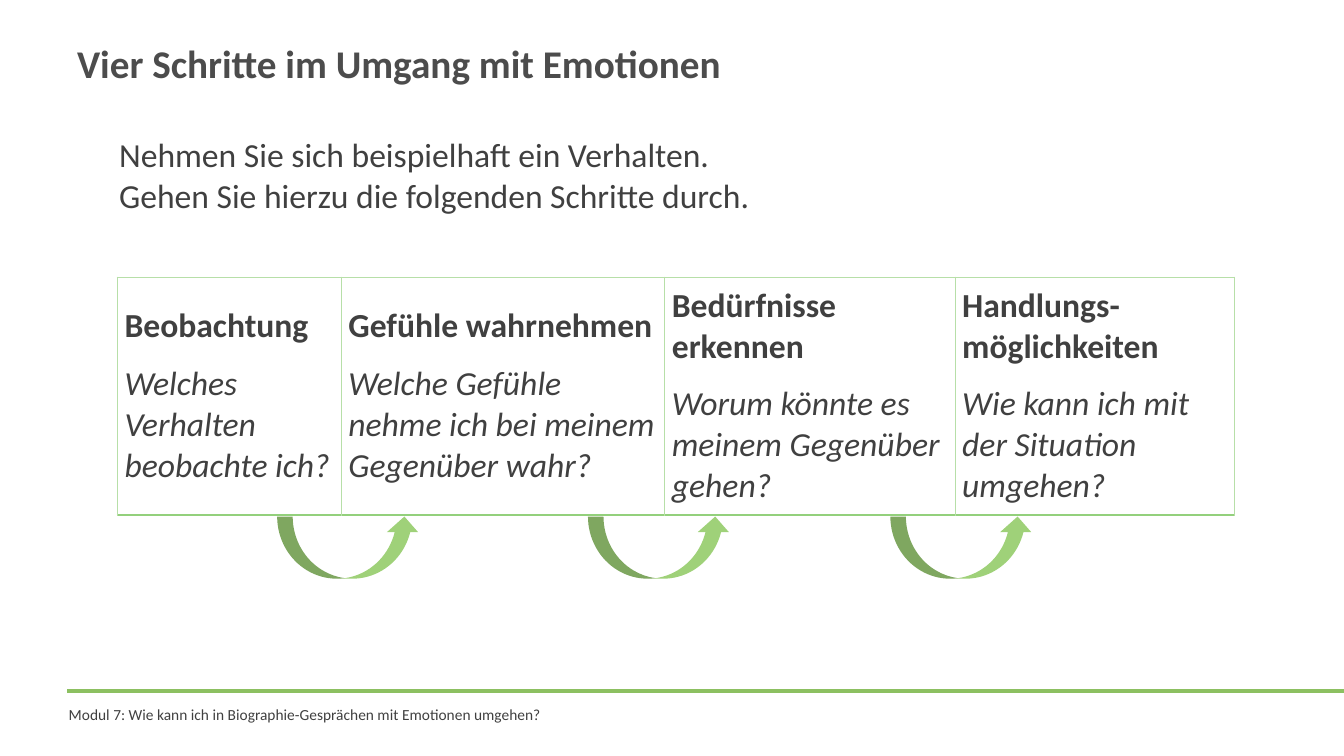
from pptx import Presentation
from pptx.dml.color import RGBColor
from pptx.enum.shapes import MSO_CONNECTOR, MSO_SHAPE
from pptx.enum.text import MSO_ANCHOR
from pptx.oxml import parse_xml
from pptx.oxml.ns import nsdecls, qn
from pptx.util import Inches, Pt

STRAIGHT = MSO_CONNECTOR.STRAIGHT
ARROW = MSO_SHAPE.CURVED_DOWN_ARROW
MIDDLE, TOP = MSO_ANCHOR.MIDDLE, MSO_ANCHOR.TOP

# Grid of 160 columns by 90 rows, twelve to the inch
COLS, ROWS = 160, 90
FONT, INK = "Calibri", "404040"
PALE, LEAF = "B7DFA8", "93D07C"

STEPS = [
    ("Beobachtung", "Welches Verhalten beobachte ich?", 2.22),
    ("Gefühle wahrnehmen",
     "Welche Gefühle nehme ich bei meinem Gegenüber wahr?", 3.21),
    ("Bedürfnisse erkennen", "Worum könnte es meinem Gegenüber gehen?", 2.88),
    ("Handlungs-möglichkeiten", "Wie kann ich mit der Situation umgehen?", 2.77),
]


def unit(n):
    return Inches(n / 12)


def place(*box):
    return [unit(n) for n in box]


def color(code):
    return RGBColor.from_string(code)


def add_run(para, text, size, ink=INK, bold=False, italic=False):
    run = para.add_run()
    run.text = text
    font = run.font
    font.name, font.size = FONT, Pt(size)
    font.bold, font.italic = bold, italic
    font.color.rgb = color(ink)


def add_text(slide, box, lines, size, anchor=TOP, **look):
    frame = slide.shapes.add_textbox(*place(*box)).text_frame
    frame.word_wrap = True
    frame.vertical_anchor = anchor
    for i, line in enumerate(lines):
        para = frame.add_paragraph() if i else frame.paragraphs[0]
        add_run(para, line, size, **look)


def add_rule(slide, left, right, row):
    rule = slide.shapes.add_connector(STRAIGHT, *place(left, row, right, row))
    rule.line.color.rgb = color("8CC061")
    rule.line.width = Pt(3)
    rule._element.spPr.append(parse_xml(f"<a:effectLst {nsdecls('a')}/>"))


def add_edges(cell):
    props = cell._tc.get_or_add_tcPr()
    edges = [("L", PALE, 1), ("R", PALE, 1), ("T", PALE, 1), ("B", LEAF, 1.5)]
    for i, (side, ink, width) in enumerate(edges):
        props.insert(i, parse_xml(
            f'<a:ln{side} {nsdecls("a")} w="{Pt(width)}"><a:solidFill>'
            f'<a:srgbClr val="{ink}"/></a:solidFill></a:ln{side}>'))


def fill_cell(cell, head, ask):
    cell.fill.background()
    cell.vertical_anchor = MIDDLE
    cell.margin_left = cell.margin_right = Inches(0.07)
    cell.margin_top = cell.margin_bottom = 0
    first = cell.text_frame.paragraphs[0]
    first.space_after = Pt(6)
    add_run(first, head, 24, bold=True)
    second = cell.text_frame.add_paragraph()
    second.space_before = Pt(6)
    add_run(second, ask, 24, italic=True)
    add_edges(cell)


def add_steps(slide, box):
    table = slide.shapes.add_table(1, len(STEPS), *place(*box)).table
    table.first_row = table.horz_banding = False
    for i, (head, ask, width) in enumerate(STEPS):
        table.columns[i].width = Inches(width)
        fill_cell(table.cell(0, i), head, ask)


def add_arrow(slide, left):
    arrow = slide.shapes.add_shape(ARROW, *place(left, 61.5, 17, 7.4))
    arrow.shadow.inherit = False
    arrow.fill.solid()
    arrow.fill.fore_color.rgb = color("9FD179")
    arrow.line.fill.background()
    arrow._element.spPr.find(qn("a:xfrm")).set("flipV", "1")


def main():
    deck = Presentation()
    deck.slide_width, deck.slide_height = unit(COLS), unit(ROWS)
    slide = deck.slides.add_slide(deck.slide_layouts[6])

    # Footer
    add_rule(slide, 8, COLS, 82.3)
    add_text(slide, (7, 83.4, 95, 3.5),
             ["Modul 7: Wie kann ich in Biographie-Gesprächen "
              "mit Emotionen umgehen?"], 11)

    # Title and task
    add_text(slide, (8, 0, 144, 15), ["Vier Schritte im Umgang mit Emotionen"],
             28, MIDDLE, ink="4C4C4C", bold=True)
    add_text(slide, (13, 15.4, 135, 10.9),
             ["Nehmen Sie sich beispielhaft ein Verhalten.",
              "Gehen Sie hierzu die folgenden Schritte durch."], 24)

    # Four steps, joined by arrows
    add_steps(slide, (14, 33, 133, 28.3))
    for left in (33, 70, 106):
        add_arrow(slide, left)

    deck.save("out.pptx")


if __name__ == "__main__":
    main()
